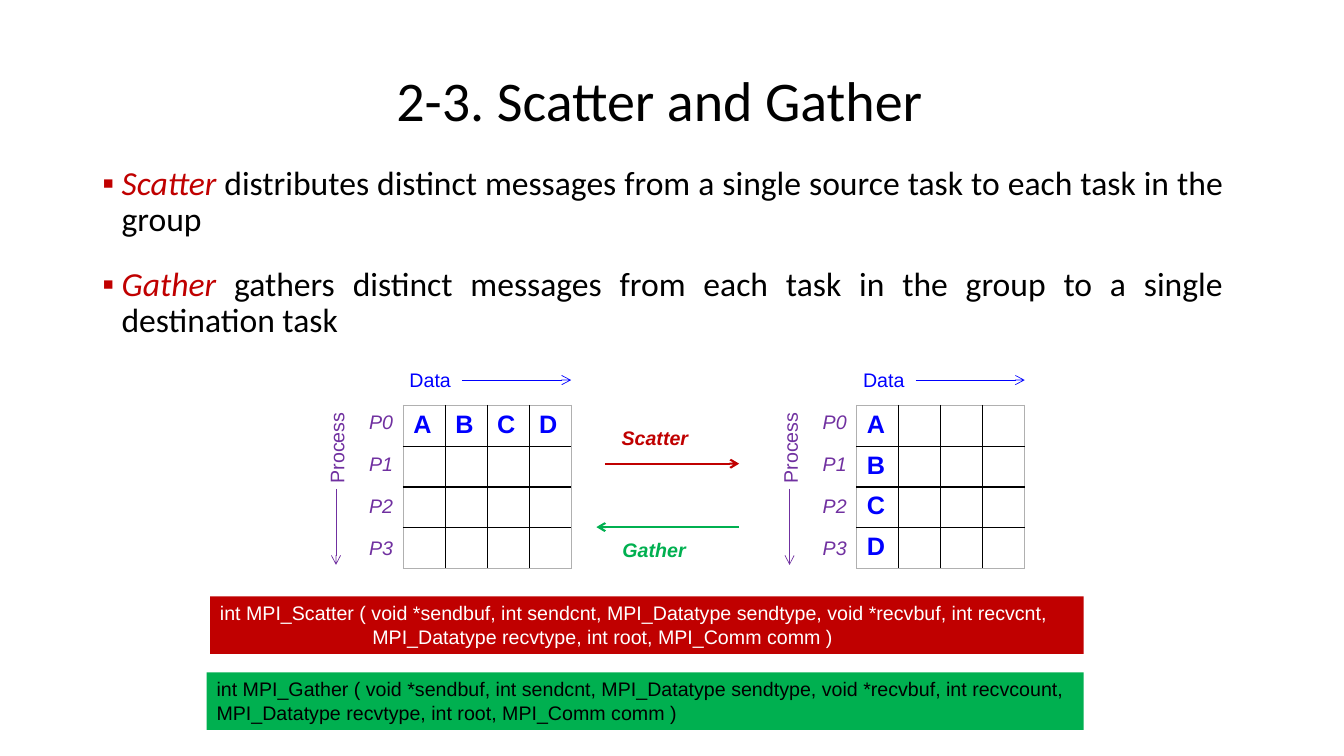
from typing import Any, NamedTuple

import pptx
import pptx.dml.color
import pptx.enum.shapes
import pptx.enum.text
import pptx.oxml
import pptx.oxml.ns
import pptx.util

# The slide is a grid of 32 columns by 18 square rows
COLS, ROWS = 32, 18
UNIT = pptx.util.Inches(7.5) // ROWS

RED, GREEN, BLUE, PURPLE = "C00000", "00B050", "0000FF", "7030A0"
BLACK, WHITE, GRAY = "000000", "FFFFFF", "B0B0B0"
ALIGN = pptx.enum.text.PP_ALIGN
ANCHOR = pptx.enum.text.MSO_ANCHOR
FIT = pptx.enum.text.MSO_AUTO_SIZE


class Box(NamedTuple):
    col: float
    row: float
    cols: float
    rows: float


class Matrix(NamedTuple):
    col: float
    cells: list[str]


class Transfer(NamedTuple):
    name: str
    color: str
    label: Box
    start: float
    end: float
    row: float


class Signature(NamedTuple):
    box: Box
    fill: str
    color: str
    lines: list[str]


MATRICES = [
    Matrix(9.6, ["ABCD", "    ", "    ", "    "]),
    Matrix(20.4, ["A   ", "B   ", "C   ", "D   "]),
]
TRANSFERS = [
    Transfer("Scatter", RED, Box(14.8, 10.03, 1.7, 0.82), 14.4, 17.6, 11.04),
    Transfer("Gather", GREEN, Box(14.82, 12.7, 1.63, 0.82), 17.6, 14.2, 12.55),
]
SIGNATURES = [
    Signature(Box(5, 14.2, 20.8, 1.37), RED, WHITE, [
        "int MPI_Scatter ( void *sendbuf, int sendcnt, MPI_Datatype sendtype, void *recvbuf, int recvcnt,",
        "                            MPI_Datatype recvtype, int root, MPI_Comm comm )"]),
    Signature(Box(4.92, 16.01, 20.88, 1.37), GREEN, BLACK, [
        "int MPI_Gather ( void *sendbuf, int sendcnt, MPI_Datatype sendtype, void *recvbuf, int recvcount,",
        "MPI_Datatype recvtype, int root, MPI_Comm comm )"]),
]
BULLETS = [
    ("Scatter ", "distributes distinct messages from a single source task to each task in the group"),
    ("Gather ", "gathers distinct messages from each task in the group to a single destination task"),
]


def grid(n: float) -> int:
    return round(n * UNIT)


def rgb(color: str) -> pptx.dml.color.RGBColor:
    return pptx.dml.color.RGBColor.from_string(color)


def xml(tag: str, content: str = "") -> Any:
    name = tag.split()[0]
    return pptx.oxml.parse_xml(
        f'<a:{tag} {pptx.oxml.ns.nsdecls("a")}>{content}</a:{name}>')


def place(sp: Any, box: Box) -> None:
    sp.left, sp.top, sp.width, sp.height = map(grid, box)


def write(p: Any, text: str, *, size: float = 14, color: str = BLACK,
          font: str = "Arial", bold: bool = False, italic: bool = False) -> None:
    r = p.add_run()
    r.text = text
    r.font.name, r.font.size = font, pptx.util.Pt(size)
    r.font.bold, r.font.italic = bold, italic
    r.font.color.rgb = rgb(color)


def add_label(shapes: Any, text: str, box: Box, rotation: float = 0, **fmt: Any) -> None:
    sp = shapes.add_textbox(*map(grid, box))
    sp.rotation = rotation
    tf = sp.text_frame
    tf.word_wrap = False
    tf.auto_size = FIT.SHAPE_TO_FIT_TEXT
    tf.margin_left = tf.margin_right = 0
    if rotation:
        tf.vertical_anchor = ANCHOR.BOTTOM
    write(tf.paragraphs[0], text, **fmt)


def add_arrow(shapes: Any, x1: float, y1: float, x2: float, y2: float,
              color: str, width: float = 0.5) -> None:
    line = shapes.add_connector(pptx.enum.shapes.MSO_CONNECTOR.STRAIGHT,
                                *map(grid, (x1, y1, x2, y2)))
    line.line.color.rgb = rgb(color)
    line.line.width = pptx.util.Pt(width)
    line.line._get_or_add_ln().append(xml('tailEnd type="arrow"'))
    line._element.spPr.append(xml("effectLst"))


def add_table(shapes: Any, box: Box, rows: list[str]) -> None:
    table = shapes.add_table(len(rows), len(rows[0]), *map(grid, box)).table
    table.first_row = table.horz_banding = False
    for i, row in enumerate(rows):
        for j, letter in enumerate(row):
            cell = table.cell(i, j)
            cell.fill.background()
            tc_pr = cell._tc.get_or_add_tcPr()
            # Black lines inside, a thin gray frame outside
            outer = {"L": j == 0, "R": j == len(row) - 1, "T": i == 0, "B": i == len(rows) - 1}
            for k, (side, is_outer) in enumerate(outer.items()):
                width, color = (pptx.util.Pt(0.5), GRAY) if is_outer else (pptx.util.Pt(1), BLACK)
                tc_pr.insert(k, xml(f'ln{side} w="{width}"',
                                    f'<a:solidFill><a:srgbClr val="{color}"/></a:solidFill>'))
            if letter.strip():
                write(cell.text_frame.paragraphs[0], letter, size=18, color=BLUE, bold=True)


def add_matrix(shapes: Any, matrix: Matrix) -> None:
    x, top = matrix.col, 9.65
    add_table(shapes, Box(x, top, 4, 3.89), matrix.cells)
    for i in range(len(matrix.cells)):
        add_label(shapes, f"P{i}", Box(x - 0.81, top + i, 0.62, 0.82),
                  color=PURPLE, italic=True)
    # Axis captions with their arrows
    add_label(shapes, "Data", Box(x + 0.15, 8.64, 1.1, 0.82), color=BLUE)
    add_arrow(shapes, x + 1.4, 9.05, x + 4, 9.05, BLUE)
    add_label(shapes, "Process", Box(x - 2.5, 10.2, 1.8, 0.82), 270, color=PURPLE)
    add_arrow(shapes, x - 1.6, 11.64, x - 1.6, 13.45, PURPLE)


def add_signature(shapes: Any, sig: Signature) -> None:
    sp = shapes.add_shape(pptx.enum.shapes.MSO_SHAPE.RECTANGLE, *map(grid, sig.box))
    sp.shadow.inherit = False
    sp.fill.solid()
    sp.fill.fore_color.rgb = rgb(sig.fill)
    sp.line.fill.background()
    tf = sp.text_frame
    tf.word_wrap = True
    tf.vertical_anchor = ANCHOR.TOP
    for i, line in enumerate(sig.lines):
        p = tf.add_paragraph() if i else tf.paragraphs[0]
        p.alignment = ALIGN.LEFT
        write(p, line, color=sig.color)


def fill_title(sp: Any) -> None:
    place(sp, Box(4.6, 0.72, 22.2, 3.48))
    tf = sp.text_frame
    tf.vertical_anchor = ANCHOR.MIDDLE
    p = tf.paragraphs[0]
    p.alignment, p.line_spacing = ALIGN.CENTER, 0.9
    write(p, "2-3. Scatter and Gather", size=40, font="Calibri")


def fill_body(sp: Any) -> None:
    place(sp, Box(2.2, 3.84, 27.17, 11.88))
    tf = sp.text_frame
    tf.auto_size = FIT.NONE
    for i, (term, meaning) in enumerate(BULLETS):
        p = tf.add_paragraph() if i else tf.paragraphs[0]
        p_pr = p._p.get_or_add_pPr()
        indent = pptx.util.Inches(0.19)
        p_pr.set("marL", str(indent))
        p_pr.set("indent", str(-indent))
        p_pr.append(xml('buFont typeface="Arial"'))
        p_pr.append(xml('buChar char="▪"'))
        p.alignment, p.line_spacing = ALIGN.JUSTIFY, 0.9
        p.space_before = pptx.util.Pt(20.5 if i else 0)
        write(p, term, size=24, font="Calibri", color=RED, italic=True)
        write(p, meaning, size=24, font="Calibri")


def main() -> None:
    prs = pptx.Presentation()
    prs.slide_width, prs.slide_height = grid(COLS), grid(ROWS)
    slide = prs.slides.add_slide(prs.slide_layouts[1])
    shapes = slide.shapes
    fill_title(shapes.title)
    fill_body(slide.placeholders[1])
    for matrix in MATRICES:
        add_matrix(shapes, matrix)
    for t in TRANSFERS:
        add_arrow(shapes, t.start, t.row, t.end, t.row, t.color, 1.5)
        add_label(shapes, t.name, t.label, color=t.color, bold=True, italic=True)
    for sig in SIGNATURES:
        add_signature(shapes, sig)
    prs.save("out.pptx")


if __name__ == "__main__":
    main()
